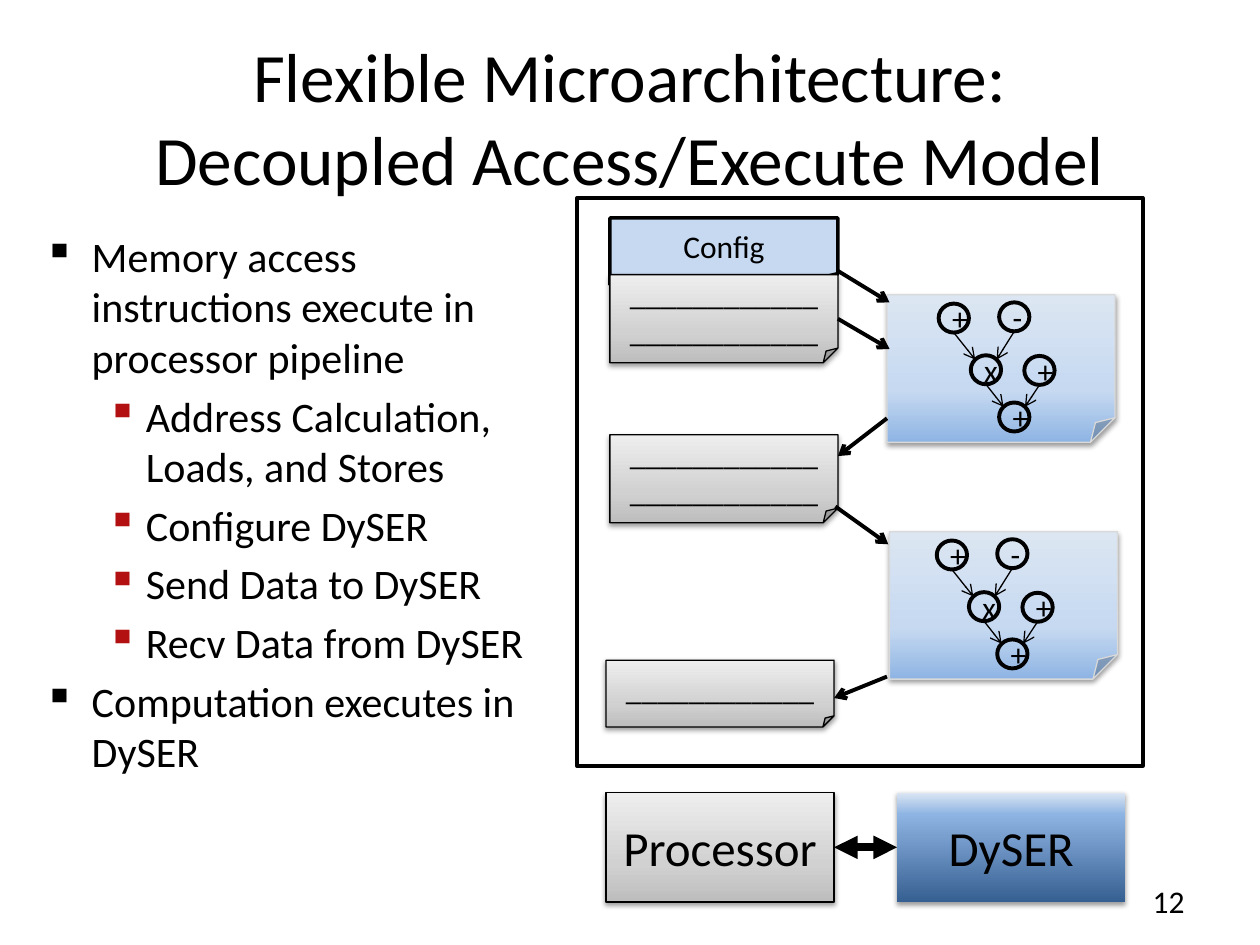
from dataclasses import dataclass
from math import cos, pi
from typing import Optional

from lxml.etree import SubElement
from pptx import Presentation
from pptx.dml.color import RGBColor
from pptx.enum.shapes import MSO_CONNECTOR, MSO_SHAPE
from pptx.enum.text import MSO_ANCHOR, PP_ALIGN
from pptx.oxml.ns import qn
from pptx.util import Emu, Inches, Pt

# The page is a grid of 100 columns by 75 rows of square cells.
CELL = Inches(10) // 100
COLUMNS, ROWS = 100, 75
FONT = "Calibri"
BLACK = "000000"
RULE = "_" * 12
GRAY = ((0, "BDBDBD"), (35, "D1D1D1"), (100, "EEEEEE"))
PALE_BLUE = ((0, "8EB4E3"), (35, "C6D9F1"), (100, "DCE6F2"))
DEEP_BLUE = ((0, "376092"), (80, "8EB4E3"), (100, "DCE6F2"))
CARD_WIDTH = 18.1
NODE_WIDTH, NODE_HEIGHT = 2.4, 2.3


@dataclass(frozen=True)
class Area:
    column: float
    row: float
    width: float
    height: float

    def cells(self) -> tuple:
        return tuple(cells(n) for n in (self.column, self.row, self.width, self.height))


@dataclass(frozen=True)
class Style:
    fill: Optional[str] = None
    gradient: tuple = ()
    line: Optional[str] = BLACK
    weight: float = 0.75
    shadow: bool = False


@dataclass(frozen=True)
class Bullet:
    text: str
    level: int = 0


@dataclass(frozen=True)
class Node:
    symbol: str
    column: float
    row: float


@dataclass(frozen=True)
class Edge:
    source: str
    target: str
    side: int  # -1 ends at the target's upper left, 1 at its upper right


GRAY_CARD = Style(gradient=GRAY, shadow=True)
BLUE_CARD = Style(gradient=PALE_BLUE, line="D9D9D9", shadow=True)
OUTLINE = Style(weight=2)
NODE_STYLE = Style(weight=2.25)

BULLETS = (
    Bullet("Memory access instructions execute in processor pipeline"),
    Bullet("Address Calculation, Loads, and Stores", 1),
    Bullet("Configure DySER", 1),
    Bullet("Send Data to DySER", 1),
    Bullet("Recv Data from DySER", 1),
    Bullet("Computation executes in DySER"),
)
# Node places are counted from the upper left of the graph.
NODES = {
    "left": Node("+", 0, 0.1),
    "minus": Node("-", 4.8, 0),
    "times": Node("x", 2.55, 4.2),
    "right": Node("+", 6.8, 4.25),
    "result": Node("+", 4.8, 7.95),
}
EDGES = (
    Edge("left", "times", -1),
    Edge("minus", "times", 1),
    Edge("times", "result", -1),
    Edge("right", "result", 1),
)
EXCHANGES = (
    ((66.5, 21.5), (70.6, 24)),
    ((66.5, 25.3), (70.6, 27.7)),
    ((70.4, 33.2), (66.5, 36.2)),
    ((66.3, 40.2), (70.5, 43.2)),
    ((70.4, 53.7), (66.2, 55.4)),
)


def cells(count: float) -> Emu:
    return Emu(round(count * CELL))


def color(code: str) -> RGBColor:
    return RGBColor.from_string(code)


def write(paragraph, text: str, size: float, align=PP_ALIGN.LEFT) -> None:
    paragraph.text = text
    paragraph.alignment = align
    for span in paragraph.runs:
        span.font.name = FONT
        span.font.size = Pt(size)
        span.font.color.rgb = color(BLACK)


def fill_text(shape, text: str, *, size: float, align=PP_ALIGN.CENTER,
              break_lines: bool = False) -> None:
    """Write centred-in-height text; newlines split paragraphs or only break lines."""
    frame = shape.text_frame
    frame.word_wrap = True
    frame.vertical_anchor = MSO_ANCHOR.MIDDLE
    for index, part in enumerate([text] if break_lines else text.split("\n")):
        paragraph = frame.add_paragraph() if index else frame.paragraphs[0]
        write(paragraph, part, size, align)


def add_label(page, area: Area, text: str, **text_format) -> None:
    fill_text(page.shapes.add_textbox(*area.cells()), text, **text_format)


def add_bullets(page, area: Area) -> None:
    frame = page.shapes.add_textbox(*area.cells()).text_frame
    frame.word_wrap = True
    for index, bullet in enumerate(BULLETS):
        paragraph = frame.add_paragraph() if index else frame.paragraphs[0]
        write(paragraph, bullet.text, 24)
        paragraph.level = bullet.level
        paragraph.space_before = Pt(4.8)
        margin, hanging = ((0.38, 0.38), (0.81, 0.31))[bullet.level]
        properties = paragraph._p.get_or_add_pPr()
        properties.set("marL", str(Inches(margin)))
        properties.set("indent", str(-Inches(hanging)))
        tint = SubElement(properties, qn("a:buClr"))
        SubElement(tint, qn("a:srgbClr"), val=(BLACK, "B31111")[bullet.level])
        SubElement(properties, qn("a:buChar"), char="▪")


def set_gradient(shape, stops: tuple) -> None:
    """Run the stops from the bottom of the shape to its top."""
    shape.fill.gradient()
    shape.fill.gradient_angle = 90
    stop_list = shape._element.spPr.find(".//" + qn("a:gsLst"))
    for old_stop in list(stop_list):
        stop_list.remove(old_stop)
    for percent, code in stops:
        stop = SubElement(stop_list, qn("a:gs"), pos=str(percent * 1000))
        SubElement(stop, qn("a:srgbClr"), val=code)


def set_shadow(shape) -> None:
    effects = shape._element.spPr.find(qn("a:effectLst"))
    shadow = SubElement(effects, qn("a:outerShdw"), blurRad=str(Pt(3.1)),
                        dist=str(Pt(1.6)), dir="5400000", rotWithShape="0")
    tint = SubElement(shadow, qn("a:srgbClr"), val=BLACK)
    SubElement(tint, qn("a:alpha"), val="38000")


def add_block(shapes, kind, area: Area, style: Style, text: str = "", size: float = 18):
    block = shapes.add_shape(kind, *area.cells())
    block.shadow.inherit = False
    if style.shadow:
        set_shadow(block)
    if style.gradient:
        set_gradient(block, style.gradient)
    elif style.fill:
        block.fill.solid()
        block.fill.fore_color.rgb = color(style.fill)
    else:
        block.fill.background()
    if style.line:
        block.line.color.rgb = color(style.line)
        block.line.width = Pt(style.weight)
    else:
        block.line.fill.background()
    if text:
        fill_text(block, text, size=size)
    return block


def add_arrow(shapes, start: tuple, end: tuple, weight: float,
              tip: str = "arrow", double: bool = False):
    arrow = shapes.add_connector(MSO_CONNECTOR.STRAIGHT, *map(cells, (*start, *end)))
    arrow.line.color.rgb = color(BLACK)
    arrow.line.width = Pt(weight)
    properties = arrow._element.spPr
    line = properties.find(qn("a:ln"))
    for name in ("a:headEnd", "a:tailEnd") if double else ("a:tailEnd",):
        SubElement(line, qn(name), type=tip)
    SubElement(properties, qn("a:effectLst"))
    return arrow


def add_graph(page, column: float, row: float) -> None:
    """Draw the data-flow graph as one group with its upper left at column, row."""
    shapes = page.shapes.add_group_shape().shapes
    for node in NODES.values():
        area = Area(column + node.column, row + node.row, NODE_WIDTH, NODE_HEIGHT)
        add_block(shapes, MSO_SHAPE.OVAL, area, NODE_STYLE, node.symbol)
    diagonal = cos(pi / 4)
    for edge in EDGES:
        source, target = NODES[edge.source], NODES[edge.target]
        start = (column + source.column + NODE_WIDTH / 2, row + source.row + NODE_HEIGHT)
        end = (column + target.column + NODE_WIDTH / 2 * (1 + edge.side * diagonal),
               row + target.row + NODE_HEIGHT / 2 * (1 - diagonal))
        add_arrow(shapes, start, end, 0.75)


def main() -> None:
    deck = Presentation()
    deck.slide_width, deck.slide_height = cells(COLUMNS), cells(ROWS)
    page = deck.slides.add_slide(deck.slide_layouts[6])
    shapes = page.shapes
    card = MSO_SHAPE.FOLDED_CORNER

    add_label(page, Area(5, 3, 90, 12.5), break_lines=True, size=39.6,
              text="Flexible Microarchitecture:\nDecoupled Access/Execute Model")
    add_bullets(page, Area(2.5, 17.8, 40.7, 55))
    add_label(page, Area(71.7, 69.5, 23.3, 4), "12", size=18, align=PP_ALIGN.RIGHT)

    processor = add_block(shapes, MSO_SHAPE.RECTANGLE, Area(48.1, 62.9, CARD_WIDTH, 8.7),
                          GRAY_CARD, "Processor", 28)
    accelerator = add_block(shapes, MSO_SHAPE.RECTANGLE, Area(71.2, 62.9, CARD_WIDTH, 8.7),
                            Style(gradient=DEEP_BLUE, line=None, shadow=True), "DySER", 28)
    link = add_arrow(shapes, (66.2, 67.25), (71.2, 67.25), 4.5, "triangle", double=True)
    link.begin_connect(processor, 3)
    link.end_connect(accelerator, 1)

    add_block(shapes, MSO_SHAPE.RECTANGLE, Area(45.8, 15.7, 44.9, 45.1), OUTLINE)
    add_block(shapes, card, Area(48.4, 17.3, CARD_WIDTH, 5.3),
              Style(fill="C6D9F1", weight=2), "Config")
    for column, row, height, lines in ((48.4, 21.8, 7, 2), (48.4, 34.5, 7, 2),
                                       (48.1, 52.4, 5.3, 1)):
        add_block(shapes, card, Area(column, row, CARD_WIDTH, height), GRAY_CARD,
                  "\n".join([RULE] * lines))
    for column, row, graph_column in ((70.4, 23.4, 74.5), (70.6, 42.2, 74.35)):
        add_block(shapes, card, Area(column, row, CARD_WIDTH, 11.7), BLUE_CARD)
        add_graph(page, graph_column, row + 0.6)
    for start, end in EXCHANGES:
        add_arrow(shapes, start, end, 2.25)

    deck.save("out.pptx")


if __name__ == "__main__":
    main()
